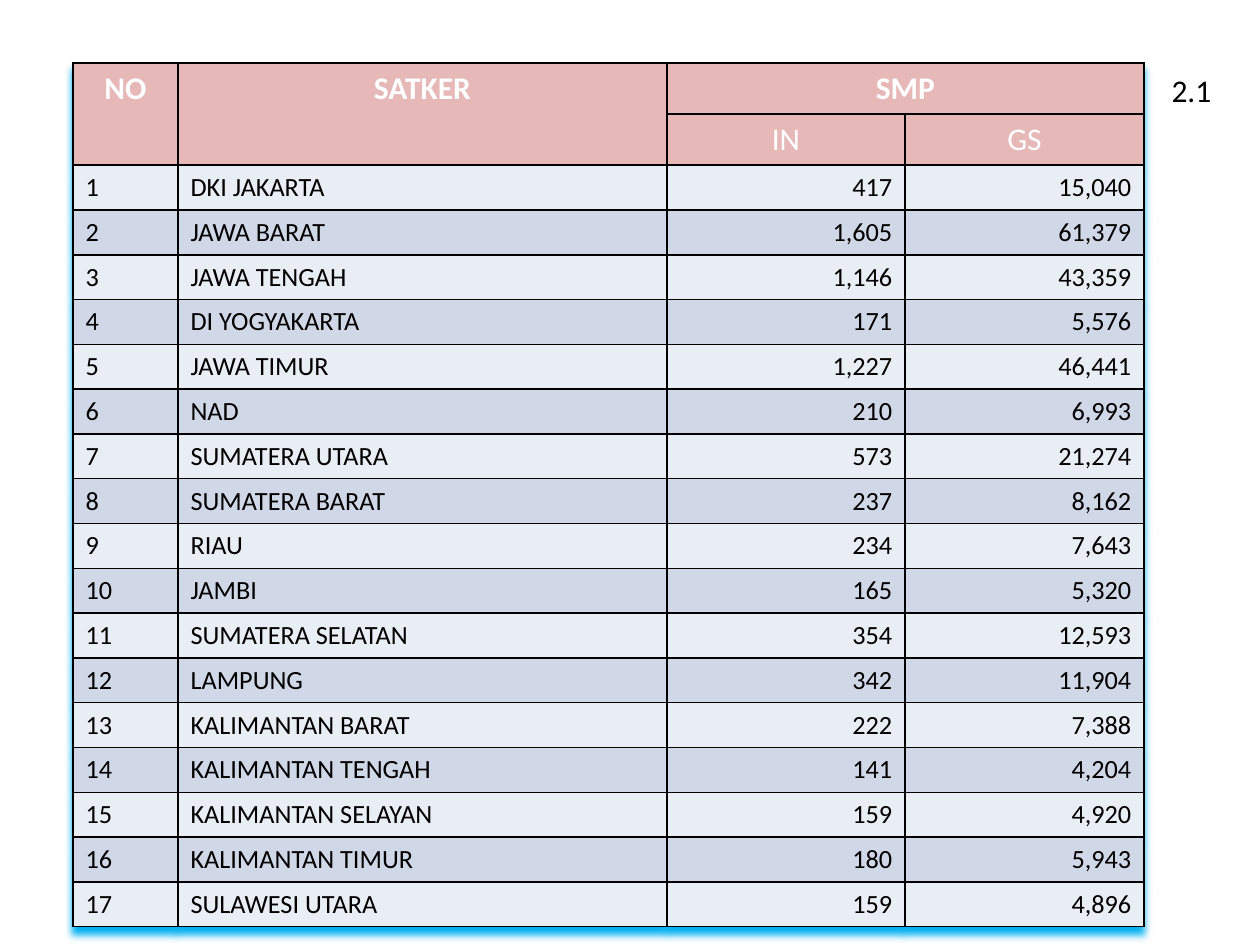
from lxml import etree
from pptx import Presentation
from pptx.dml.color import RGBColor
from pptx.enum.text import MSO_ANCHOR, MSO_AUTO_SIZE, PP_ALIGN
from pptx.oxml import parse_xml
from pptx.oxml.ns import qn
from pptx.util import Pt

LEFT, CENTER, RIGHT = PP_ALIGN.LEFT, PP_ALIGN.CENTER, PP_ALIGN.RIGHT
MIDDLE, NO_FIT = MSO_ANCHOR.MIDDLE, MSO_AUTO_SIZE.NONE
PX = 914400 // 126
FONT = "Calibri"
BLACK, WHITE, PINK = "000000", "FFFFFF", "E6B9B8"
BANDS = ["E9EDF4", "D0D8E8"]
COL_WIDTHS = [105, 489, 238, 239]
HEAD_H, ROW_H = 48, 42
SHADOW = (
    '<a:effectLst xmlns:a="http://schemas.openxmlformats.org/drawingml/2006/main">'
    '<a:outerShdw blurRad="50800" dist="50800" dir="5400000" algn="t" rotWithShape="0">'
    '<a:srgbClr val="00B0F0"/></a:outerShdw></a:effectLst>'
)
SCHOOLS = [
    ("DKI JAKARTA", 417, 15040),
    ("JAWA BARAT", 1605, 61379),
    ("JAWA TENGAH", 1146, 43359),
    ("DI YOGYAKARTA", 171, 5576),
    ("JAWA TIMUR", 1227, 46441),
    ("NAD", 210, 6993),
    ("SUMATERA UTARA", 573, 21274),
    ("SUMATERA BARAT", 237, 8162),
    ("RIAU", 234, 7643),
    ("JAMBI", 165, 5320),
    ("SUMATERA SELATAN", 354, 12593),
    ("LAMPUNG", 342, 11904),
    ("KALIMANTAN BARAT", 222, 7388),
    ("KALIMANTAN TENGAH", 141, 4204),
    ("KALIMANTAN SELAYAN", 159, 4920),
    ("KALIMANTAN TIMUR", 180, 5943),
    ("SULAWESI UTARA", 159, 4896),
]


def px(n):
    return n * PX


def rgb(color):
    return RGBColor.from_string(color)


def add_text(tf, text, size, color, align, bold=False):
    p = tf.paragraphs[0]
    p.alignment = align
    r = p.add_run()
    r.text = text
    r.font.name, r.font.size, r.font.bold = FONT, Pt(size), bold
    r.font.color.rgb = rgb(color)


def format_cell(cell, fill):
    cell.fill.solid()
    cell.fill.fore_color.rgb = rgb(fill)
    tc_pr = cell._tc.get_or_add_tcPr()
    for i, side in enumerate(("lnL", "lnR", "lnT", "lnB")):
        ln = etree.Element(qn(f"a:{side}"), w=str(Pt(1)))
        solid = etree.SubElement(ln, qn("a:solidFill"))
        etree.SubElement(solid, qn("a:srgbClr"), val=BLACK)
        tc_pr.insert(i, ln)


def add_title(s, x, y, w, h):
    sp = s.shapes.title
    sp.left, sp.top, sp.width, sp.height = px(x), px(y), px(w), px(h)
    tf = sp.text_frame
    tf.auto_size, tf.vertical_anchor = NO_FIT, MIDDLE
    add_text(tf, "2.1", 18, BLACK, CENTER)


def add_school_table(s, x, y, w, h):
    frame = s.shapes.add_table(len(SCHOOLS) + 2, len(COL_WIDTHS), px(x), px(y), px(w), px(h))
    table = frame.table
    table._tbl.tblPr.insert(0, parse_xml(SHADOW))
    for col, width in zip(table.columns, COL_WIDTHS):
        col.width = px(width)
    for i, row in enumerate(table.rows):
        row.height = px(HEAD_H if i < 2 else ROW_H)
        for cell in row.cells:
            format_cell(cell, PINK if i < 2 else BANDS[i % 2])
    frame.height = px(h)

    # Two-row header
    table.cell(0, 0).merge(table.cell(1, 0))
    table.cell(0, 1).merge(table.cell(1, 1))
    table.cell(0, 2).merge(table.cell(0, 3))
    for row, col, text in [(0, 0, "NO"), (0, 1, "SATKER"), (0, 2, "SMP"), (1, 2, "IN"), (1, 3, "GS")]:
        add_text(table.cell(row, col).text_frame, text, 18, WHITE, CENTER, bold=row == 0)

    # One row per work unit
    for no, (name, inti, gs) in enumerate(SCHOOLS, 1):
        values = (str(no), name, f"{inti:,}", f"{gs:,}")
        for col, text in enumerate(values):
            align = LEFT if col < 2 else RIGHT
            add_text(table.cell(no + 1, col).text_frame, text, 15, BLACK, align)


def main():
    prs = Presentation()
    prs.slide_width, prs.slide_height = px(1260), px(945)
    s = prs.slides.add_slide(prs.slide_layouts[5])
    add_title(s, 1155, 63, 73, 53)
    add_school_table(s, 73, 63, sum(COL_WIDTHS), 851)
    prs.save("out.pptx")


if __name__ == "__main__":
    main()
